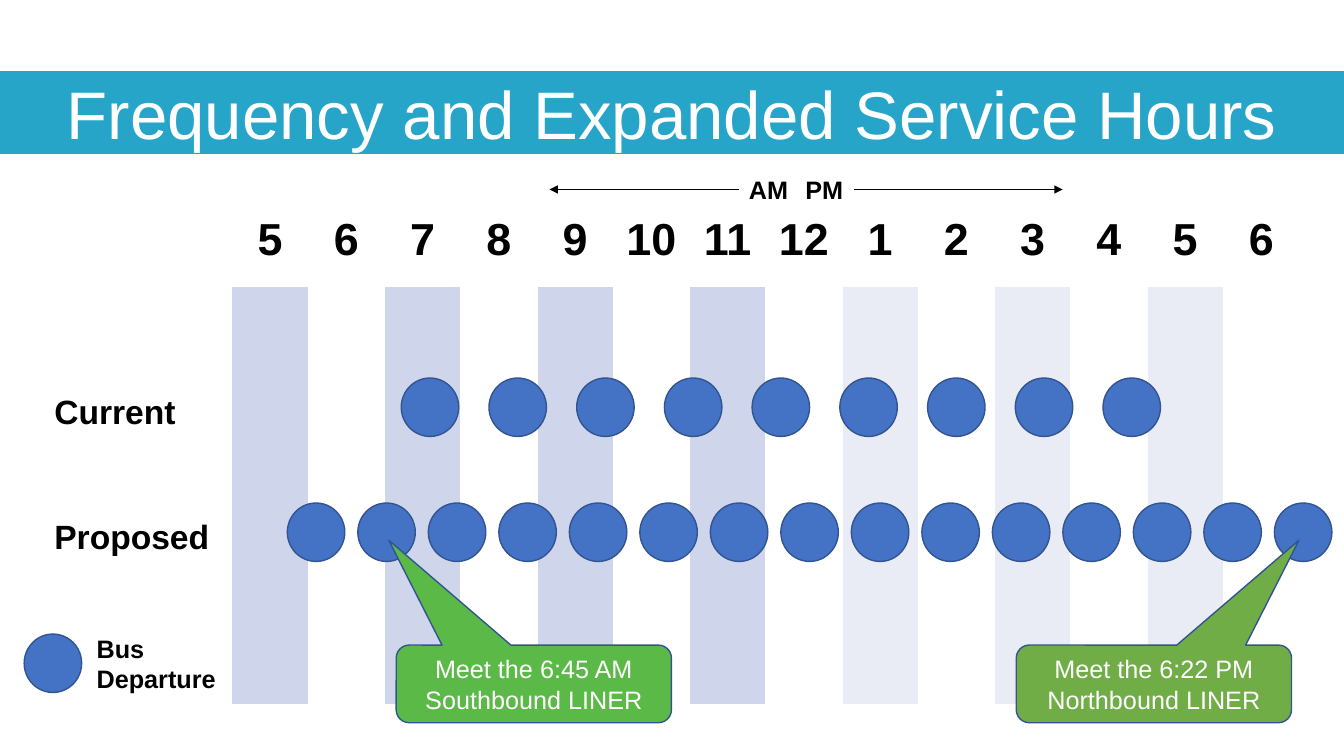
from lxml.etree import SubElement
from pptx import Presentation
from pptx.dml.color import RGBColor
from pptx.enum.shapes import MSO_CONNECTOR, MSO_SHAPE as Shape
from pptx.enum.text import MSO_ANCHOR as Anchor, MSO_AUTO_SIZE as AutoSize, PP_ALIGN as Align
from pptx.oxml import parse_xml
from pptx.oxml.ns import nsdecls, qn
from pptx.util import Inches, Pt

WIDTH, HEIGHT = 13.33, 7.5
FONT = "Arial"
BLACK, WHITE = "000000", "FFFFFF"
TEAL, BLUE, DARK_BLUE = "26A5C8", "4472C4", "325491"
MORNING, AFTERNOON = "CFD5EA", "E9EBF5"

TITLE = "Frequency and Expanded Service Hours"
HOURS = ["5", "6", "7", "8", "9", "10", "11", "12", "1", "2", "3", "4", "5", "6"]
MORNING_HOURS = 8
GRID_LEFT, GRID_TOP, GRID_WIDTH = 2.3, 2.08, 10.59
ROW_HEIGHTS = [0.75, 4.16]
DOT_WIDTH, DOT_HEIGHT = 0.57, 0.58

# Name, label width, top of dots, first dot, last dot, number of departures
SCHEDULES = [
    ("Current", 1.42, 3.75, 3.98, 10.94, 9),
    ("Proposed", 1.75, 4.99, 2.85, 12.64, 15),
]
# Text, left, top, width, height
PERIODS = [("PM", 7.89, 1.68, 0.58, 0.4), ("AM", 7.33, 1.68, 0.59, 0.4)]
ARROWS = [(8.47, 10.54), (7.33, 5.45)]
ARROW_TOP = 1.88
LEGEND = ["Bus", "Departure"]
# Text, left, fill, horizontal share of the pointer tip
CALLOUTS = [
    ("Meet the 6:22 PM Northbound LINER", 10.08, "70AD47", 0.527),
    ("Meet the 6:45 AM Southbound LINER", 3.93, "5BBA47", -0.527),
]
CALLOUT_TOP, CALLOUT_WIDTH, CALLOUT_HEIGHT = 6.4, 2.73, 0.77


def color(value):
    return RGBColor.from_string(value)


def write(paragraph, text, size, font_color, bold=False, align=Align.LEFT):
    paragraph.alignment = align
    run = paragraph.add_run()
    run.text = text
    font = run.font
    font.name, font.size, font.bold = FONT, Pt(size), bold
    font.color.rgb = color(font_color)


def add_shape(slide, kind, box, fill, line, text="", size=18):
    shape = slide.shapes.add_shape(kind, *map(Inches, box))
    shape.shadow.inherit = False
    shape.fill.solid()
    shape.fill.fore_color.rgb = color(fill)
    shape.line.color.rgb = color(line)
    shape.line.width = Pt(1)
    if text:
        frame = shape.text_frame
        frame.word_wrap = True
        frame.vertical_anchor = Anchor.MIDDLE
        write(frame.paragraphs[0], text, size, WHITE, align=Align.CENTER)
    return shape


def add_dot(slide, left, top):
    add_shape(slide, Shape.OVAL, (left, top, DOT_WIDTH, DOT_HEIGHT), BLUE, DARK_BLUE)


def add_label(slide, lines, box, size=18):
    frame = slide.shapes.add_textbox(*map(Inches, box)).text_frame
    frame.word_wrap = False
    frame.auto_size = AutoSize.SHAPE_TO_FIT_TEXT
    for index, line in enumerate(lines):
        paragraph = frame.add_paragraph() if index else frame.paragraphs[0]
        write(paragraph, line, size, BLACK, bold=True)


def add_arrow(slide, start, end):
    arrow = slide.shapes.add_connector(
        MSO_CONNECTOR.STRAIGHT, *map(Inches, (start, ARROW_TOP, end, ARROW_TOP)))
    arrow.line.color.rgb = color(BLACK)
    arrow.line.width = Pt(0.5)
    SubElement(arrow.line._get_or_add_ln(), qn("a:tailEnd"), type="triangle")
    SubElement(arrow._element.spPr, qn("a:effectLst"))


def set_borders(cell, widths):
    """Draw white borders; widths are points for left, right, top and bottom."""
    properties = cell._tc.get_or_add_tcPr()
    for index, (side, width) in enumerate(zip("LRTB", widths)):
        properties.insert(index, parse_xml(
            f'<a:ln{side} {nsdecls("a")} w="{Pt(width)}"><a:solidFill>'
            f'<a:srgbClr val="{WHITE}"/></a:solidFill></a:ln{side}>'))


def add_hour_grid(slide):
    table = slide.shapes.add_table(
        len(ROW_HEIGHTS), len(HOURS), Inches(GRID_LEFT), Inches(GRID_TOP),
        Inches(GRID_WIDTH), Inches(sum(ROW_HEIGHTS))).table
    table.first_row = table.horz_banding = False
    for row, height in zip(table.rows, ROW_HEIGHTS):
        row.height = Inches(height)
    for index, hour in enumerate(HOURS):
        table.columns[index].width = Inches(GRID_WIDTH / len(HOURS))
        header, band = table.cell(0, index), table.cell(1, index)
        write(header.text_frame.paragraphs[0], hour, 32, BLACK, True, Align.CENTER)
        header.fill.background()
        if index % 2:
            band.fill.background()
        else:
            band.fill.solid()
            band.fill.fore_color.rgb = color(MORNING if index < MORNING_HOURS else AFTERNOON)
        set_borders(header, (1, 1, 1, 3))
        set_borders(band, (1, 1, 3, 1))


def main():
    presentation = Presentation()
    presentation.slide_width, presentation.slide_height = Inches(WIDTH), Inches(HEIGHT)
    slide = presentation.slides.add_slide(presentation.slide_layouts[6])

    add_shape(slide, Shape.RECTANGLE, (0, 0.71, WIDTH, 0.81), TEAL, TEAL, TITLE, 48)
    add_hour_grid(slide)
    for text, *box in PERIODS:
        add_label(slide, [text], box)
    for start, end in ARROWS:
        add_arrow(slide, start, end)

    for name, width, top, first, last, count in SCHEDULES:
        add_label(slide, [name], (0.44, top + 0.08, width, 0.5), 24)
        step = (last - first) / (count - 1)
        for index in range(count):
            add_dot(slide, first + index * step, top)

    add_label(slide, LEGEND, (0.86, 6.23, 1.39, 0.71))
    add_dot(slide, 0.24, 6.29)

    for text, left, fill, tip in CALLOUTS:
        box = (left, CALLOUT_TOP, CALLOUT_WIDTH, CALLOUT_HEIGHT)
        callout = add_shape(slide, Shape.ROUNDED_RECTANGULAR_CALLOUT, box, fill, DARK_BLUE, text)
        for index, value in enumerate((tip, -1.851, 0.167)):
            callout.adjustments[index] = value

    presentation.save("out.pptx")


if __name__ == "__main__":
    main()
